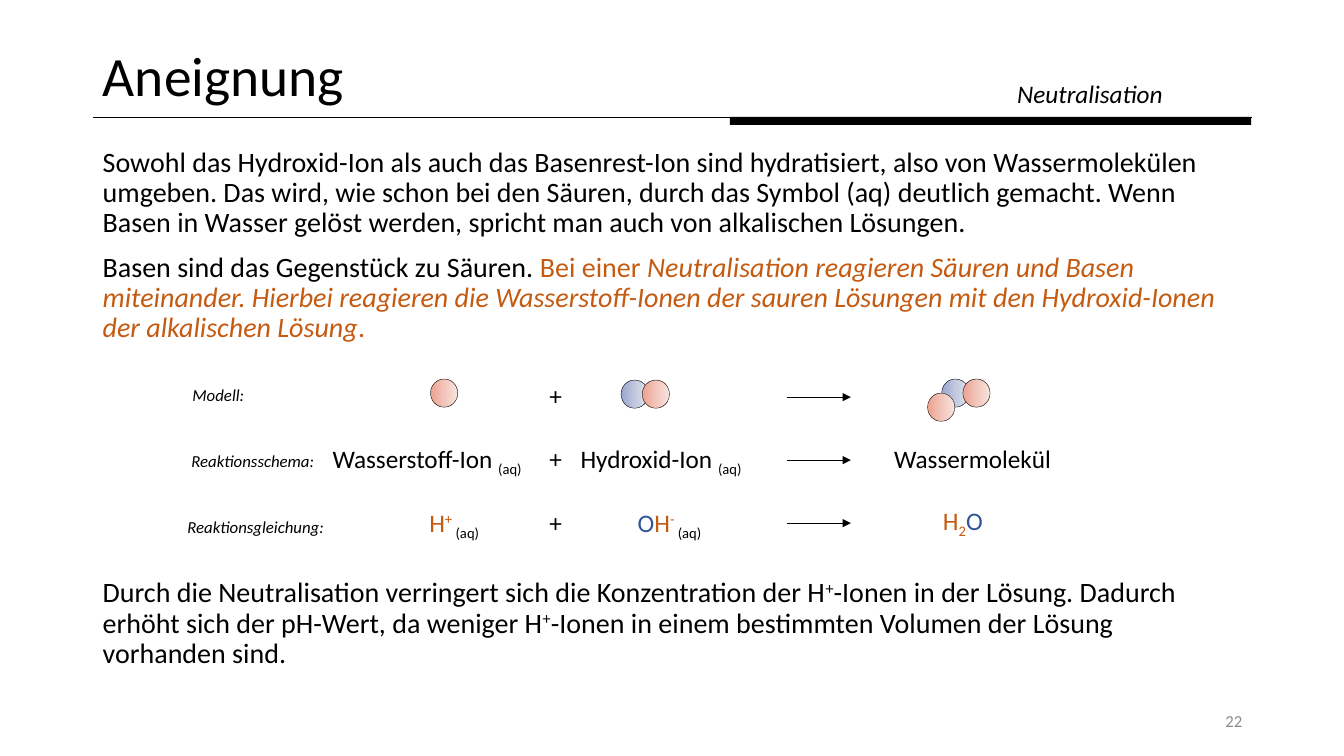
from copy import deepcopy

from lxml import etree
from pptx import Presentation
from pptx.dml.color import RGBColor
from pptx.enum.shapes import MSO_CONNECTOR, MSO_SHAPE
from pptx.enum.text import MSO_ANCHOR, PP_ALIGN
from pptx.oxml.ns import qn
from pptx.util import Inches, Pt

LEFT, CENTER, RIGHT = PP_ALIGN.LEFT, PP_ALIGN.CENTER, PP_ALIGN.RIGHT
TOP, MIDDLE = MSO_ANCHOR.TOP, MSO_ANCHOR.MIDDLE
OVAL, RECTANGLE = MSO_SHAPE.OVAL, MSO_SHAPE.RECTANGLE
STRAIGHT = MSO_CONNECTOR.STRAIGHT

BLACK, ORANGE, BLUE, GREY = "000000", "C55A11", "2F5597", "8C8C8C"
ATOM_SHADES = {
    "H": ("EDA08E", "F2C5BB", "F8E3DE"),
    "O": ("99A5CC", "C2C8DE", "E1E4EE"),
}
SUPER, SUB = {"baseline": 30}, {"baseline": -25}

# Text runs: (text, format)
AQ = ("(aq)", SUB)
PLUS = [("+", {})]
TITLE = [("Aneignung", {})]
TOPIC = [("Neutralisation", {"italic": True})]
PAGE_NUMBER = [("22", {"color": GREY})]
BODY = [
    [("Sowohl das Hydroxid-Ion als auch das Basenrest-Ion sind hydratisiert, also von "
      "Wassermolekülen umgeben. Das wird, wie schon bei den Säuren, durch das Symbol (aq) "
      "deutlich gemacht. Wenn Basen in Wasser gelöst werden, spricht man auch von "
      "alkalischen Lösungen.", {})],
    [("Basen sind das Gegenstück zu Säuren. ", {}),
     ("Bei einer ", {"color": ORANGE}),
     ("Neutralisation reagieren Säuren und Basen miteinander. Hierbei reagieren die "
      "Wasserstoff-Ionen der sauren Lösungen mit den Hydroxid-Ionen der alkalischen Lösung",
      {"color": ORANGE, "italic": True}),
     (".", {"color": ORANGE})],
    [("Durch die Neutralisation verringert sich die Konzentration der H", {}),
     ("+", SUPER),
     ("-Ionen in der Lösung. Dadurch erhöht sich der pH-Wert, da weniger H", {}),
     ("+", SUPER),
     ("-Ionen in einem bestimmten Volumen der Lösung vorhanden sind.", {})],
]
BODY_GAPS = (0, 10, 168)  # the last gap leaves room for the reaction

# Reaction rows: label, its left edge and width
ROW_LABELS = [
    ("Modell:", 1.81, 1.52),
    ("Reaktionsschema:", 1.8, 1.52),
    ("Reaktionsgleichung:", 1.76, 1.62),
]
# Reaction terms: runs, left, top shift within the row, width, alignment
SCHEME = [
    ([("Wasserstoff-Ion ", {}), AQ], 3.2, 0, 2.26, LEFT),
    ([("Hydroxid-Ion ", {}), AQ], 5.66, 0, 2.26, LEFT),
    ([("Wassermolekül", {})], 8.77, 0, 2.26, LEFT),
]
EQUATION = [
    ([("H", {"color": ORANGE}), ("+ ", {"color": ORANGE, **SUPER}), AQ],
     3.92, 0, 1.17, CENTER),
    ([("O", {"color": BLUE}), ("H", {"color": ORANGE}),
      ("- ", {"color": ORANGE, **SUPER}), AQ], 5.59, 0, 2.1, CENTER),
    ([("H", {"color": ORANGE}), ("2", {"color": ORANGE, **SUB}), ("O", {"color": BLUE})],
     8.5, -0.02, 2.1, CENTER),
]
# Molecules: left, top, atoms as (element, steps right, steps down)
MOLECULES = [
    (4.27, 3.76, [("H", 0, 0)]),
    (6.16, 3.77, [("O", 0, 0), ("H", 0.21, 0)]),
    (9.34, 3.76, [("O", 0, 0), ("H", 0.21, 0), ("H", -0.14, 0.14)]),
]

MARGIN, CONTENT_WIDTH = 0.92, 11.5
RULE_Y = 1.16
FIRST_ROW, ROW_PITCH = 3.72, 0.63
FIRST_LABEL, LABEL_PITCH = 3.77, 0.655
FIRST_ARROW, ARROW_PITCH = 3.94, 0.625
ARROW_START, ARROW_END, PLUS_LEFT = 7.81, 8.44, 5.35


def rgb(hex_color):
    return RGBColor.from_string(hex_color)


def write_runs(paragraph, runs, size):
    for text, style in runs:
        run = paragraph.add_run()
        run.text = text
        values = {"name": "Calibri", "size": Pt(size), "italic": style.get("italic", False)}
        for key, value in values.items():
            setattr(run.font, key, value)
        run.font.color.rgb = rgb(style.get("color", BLACK))
        if "baseline" in style:
            run.font._element.set("baseline", str(style["baseline"] * 1000))


def add_text(slide, box, paragraphs, size, align=LEFT, anchor=TOP, spacing=1.0, gaps=(0,)):
    frame = slide.shapes.add_textbox(*map(Inches, box)).text_frame
    frame.word_wrap = True
    frame.vertical_anchor = anchor
    for index, (runs, gap) in enumerate(zip(paragraphs, gaps)):
        paragraph = frame.add_paragraph() if index else frame.paragraphs[0]
        layout = {"alignment": align, "line_spacing": spacing, "space_before": Pt(gap)}
        for key, value in layout.items():
            setattr(paragraph, key, value)
        write_runs(paragraph, runs, size)


def add_line(slide, start, end, arrow=False):
    line = slide.shapes.add_connector(STRAIGHT, *map(Inches, (*start, *end)))
    line.line.color.rgb = rgb(BLACK)
    line.line.width = Pt(0.5)
    if arrow:
        etree.SubElement(line.line._get_or_add_ln(), qn("a:tailEnd"), type="triangle")
    etree.SubElement(line._element.spPr, qn("a:effectLst"))


def add_atom(slide, element, left, top):
    atom = slide.shapes.add_shape(OVAL, *map(Inches, (left, top, 0.27, 0.28)))
    atom.shadow.inherit = False
    atom.fill.gradient()
    atom.fill.gradient_angle = 0
    stops = atom._element.spPr.find(qn("a:gradFill")).find(qn("a:gsLst"))
    stops.insert(1, deepcopy(stops[0]))
    for index, shade in enumerate(ATOM_SHADES[element]):
        stop = atom.fill.gradient_stops[index]
        stop.position = index / 2
        stop.color.rgb = rgb(shade)
    atom.line.color.rgb = rgb(BLACK)
    atom.line.width = Pt(0.25)


def add_header(slide):
    add_line(slide, (MARGIN, RULE_Y), (MARGIN + CONTENT_WIDTH, RULE_Y))
    bar = slide.shapes.add_shape(RECTANGLE, *map(Inches, (7.24, RULE_Y, 5.17, 0.08)))
    bar.shadow.inherit = False
    bar.fill.solid()
    bar.fill.fore_color.rgb = rgb(BLACK)
    bar.line.fill.background()

    title = slide.shapes.title
    box = {"left": MARGIN, "top": 0.4, "width": CONTENT_WIDTH, "height": 0.76}
    for side, length in box.items():
        setattr(title, side, Inches(length))
    title.text_frame.vertical_anchor = MIDDLE
    heading = title.text_frame.paragraphs[0]
    heading.alignment = LEFT
    heading.line_spacing = 0.9
    write_runs(heading, TITLE, 39.6)
    add_text(slide, (9.99, 0.73, 2.76, 0.4), [TOPIC], 18)


def add_reaction(slide):
    for row, (label, left, width) in enumerate(ROW_LABELS):
        label_top = FIRST_LABEL + row * LABEL_PITCH
        add_text(slide, (left, label_top, width, 0.3), [[(label, {"italic": True})]], 12)
        row_top = FIRST_ROW + row * ROW_PITCH
        add_text(slide, (PLUS_LEFT, row_top, 0.31, 0.4), [PLUS], 18)
        arrow_y = FIRST_ARROW + row * ARROW_PITCH
        add_line(slide, (ARROW_START, arrow_y), (ARROW_END, arrow_y), arrow=True)
    for row, terms in enumerate((SCHEME, EQUATION), start=1):
        for runs, left, shift, width, align in terms:
            top = FIRST_ROW + row * ROW_PITCH + shift
            add_text(slide, (left, top, width, 0.4), [runs], 18, align)
    for left, top, atoms in MOLECULES:
        for element, right, down in atoms:
            add_atom(slide, element, left + right, top + down)


def main():
    deck = Presentation()
    deck.slide_width, deck.slide_height = Inches(13.33), Inches(7.5)
    slide = deck.slides.add_slide(deck.slide_layouts.get_by_name("Title Only"))
    add_header(slide)
    add_text(slide, (MARGIN, 1.42, CONTENT_WIDTH, 5.33), BODY, 20, spacing=0.9, gaps=BODY_GAPS)
    add_text(slide, (9.42, 6.95, 3, 0.4), [PAGE_NUMBER], 12, RIGHT, MIDDLE)
    add_reaction(slide)
    deck.save("out.pptx")


if __name__ == "__main__":
    main()
